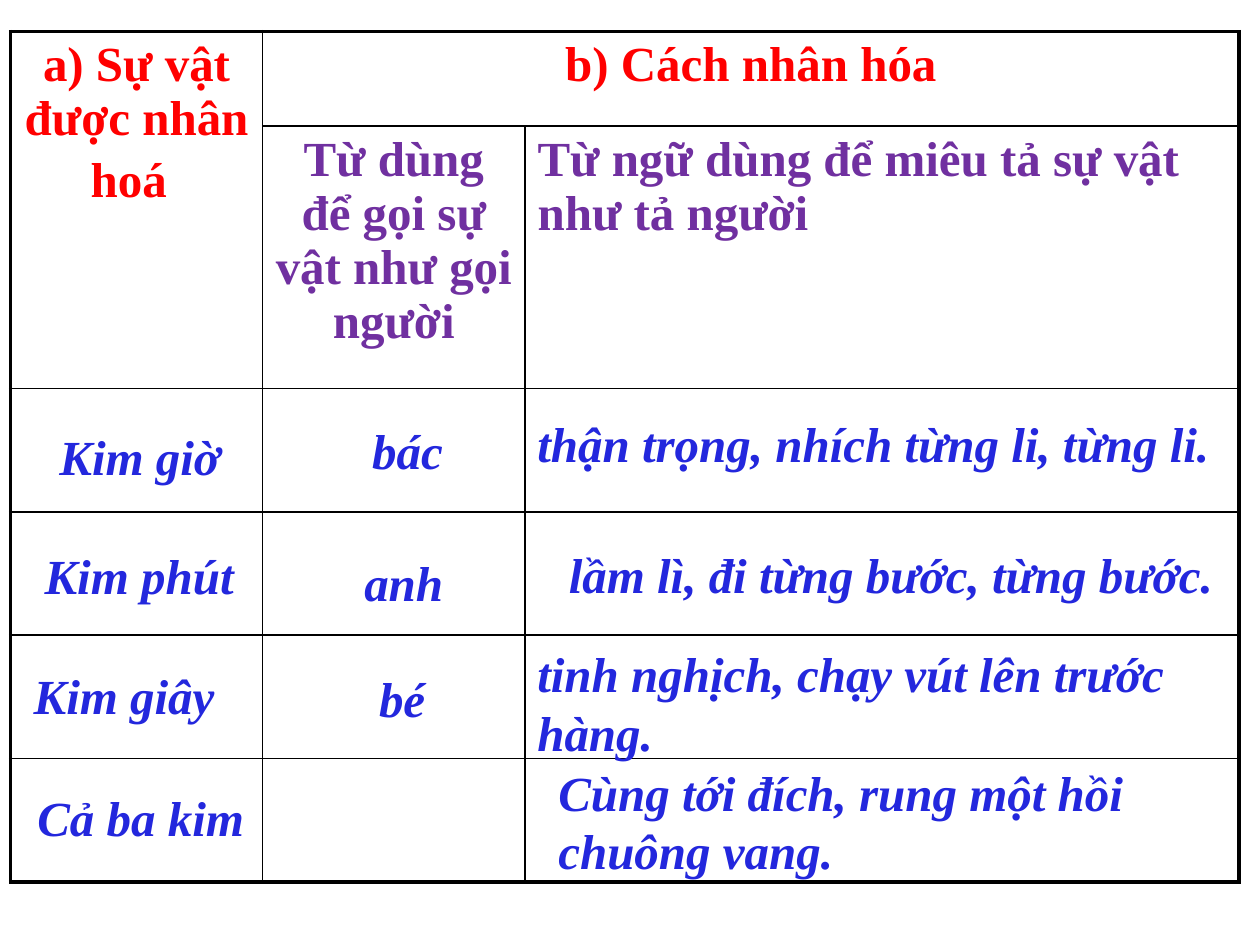
from dataclasses import dataclass
from typing import Any

from lxml.etree import SubElement
from pptx import Presentation
from pptx.dml.color import RGBColor
from pptx.enum.text import MSO_AUTO_SIZE, PP_ALIGN
from pptx.oxml.ns import qn
from pptx.util import Inches, Pt

GRID_COLUMNS = 120
GRID_ROWS = 90


def color(value):
    return RGBColor.from_string(value)


def write(para, text, *, font="Times New Roman", size=28, fill="000000",
          bold=True, italic=False, align=PP_ALIGN.LEFT):
    para.alignment = align
    span = para.add_run()
    span.text = text
    span.font.name = font
    span.font.size = Pt(size)
    span.font.bold = bold
    span.font.italic = italic
    span.font.color.rgb = color(fill)


@dataclass
class SlideBuilder:
    deck: Any
    page: Any
    answer: str = "2327DD"
    border: str = "000000"
    inner: float = 1
    outer: float = 2.25

    def across(self, columns):
        return round(self.deck.slide_width * columns / GRID_COLUMNS)

    def down(self, rows):
        return round(self.deck.slide_height * rows / GRID_ROWS)

    def frame(self, left, top, width, height):
        return self.across(left), self.down(top), self.across(width), self.down(height)

    def edge(self, cell, side, weight):
        line = SubElement(cell._tc.get_or_add_tcPr(), qn(f"a:ln{side}"),
                          w=str(Pt(weight)))
        fill = SubElement(line, qn("a:solidFill"))
        SubElement(fill, qn("a:srgbClr"), val=self.border)

    def table(self, left, top, widths, heights, merges):
        shape = self.page.shapes.add_table(
            len(heights), len(widths),
            *self.frame(left, top, sum(widths), sum(heights)))
        table = shape.table
        table.first_row = False
        table.horz_banding = False
        for column, width in zip(table.columns, widths):
            column.width = self.across(width)
        for row, height in zip(table.rows, heights):
            row.height = self.down(height)
        for first, last in merges:
            table.cell(*first).merge(table.cell(*last))
        for r in range(len(heights)):
            for c in range(len(widths)):
                cell = table.cell(r, c)
                outside = {"L": c == 0, "R": c + cell.span_width == len(widths),
                           "T": r == 0, "B": r + cell.span_height == len(heights)}
                for side, is_outer in outside.items():
                    self.edge(cell, side, self.outer if is_outer else self.inner)
                cell.fill.background()
        return table

    def answer_box(self, text, left, top, width, height=6.8, align=PP_ALIGN.CENTER):
        box = self.page.shapes.add_textbox(*self.frame(left, top, width, height))
        box.text_frame.word_wrap = True
        box.text_frame.auto_size = MSO_AUTO_SIZE.SHAPE_TO_FIT_TEXT
        write(box.text_frame.paragraphs[0], text, fill=self.answer,
              italic=True, align=align)


def main():
    deck = Presentation()
    deck.slide_width, deck.slide_height = Inches(10), Inches(7.5)
    builder = SlideBuilder(deck, deck.slides.add_slide(deck.slide_layouts[6]))

    table = builder.table(1, 3, [24, 25, 68], [9, 25] + [11.75] * 4,
                          [((0, 0), (1, 0)), ((0, 1), (0, 2))])
    red, purple = "FF0000", "7030A0"
    headings = [
        (0, 0, "a) Sự vật được nhân hoá", red, PP_ALIGN.CENTER),
        (0, 1, "b) Cách nhân hóa", red, PP_ALIGN.CENTER),
        (1, 1, "Từ dùng để gọi sự vật như gọi người", purple, PP_ALIGN.CENTER),
        (1, 2, "Từ ngữ dùng để miêu tả sự vật như tả người", purple, PP_ALIGN.LEFT),
    ]
    for row, column, text, fill, align in headings:
        para = table.cell(row, column).text_frame.paragraphs[0]
        write(para, text, fill=fill, align=align)
    write(table.cell(0, 0).text_frame.paragraphs[0], " ", font="Arial",
          size=32, bold=False, align=PP_ALIGN.CENTER)

    names_and_titles = [
        ("Kim giờ ", 2.9, 40, 22),
        ("Kim phút ", 2.75, 51.4, 21),
        ("Kim giây ", 1.9, 62.8, 21),
        ("Cả ba kim ", 2, 74.4, 22.8),
        ("bác", 27.8, 39.5, 22),
        ("anh", 26.8, 52, 23.3),
        ("bé", 26.8, 63.1, 23),
    ]
    for text, left, top, width in names_and_titles:
        builder.answer_box(text, left, top, width)

    descriptions = [
        ("thận trọng, nhích từng li, từng li.", 50, 38.8, 70, 6.8),
        ("lầm lì, đi từng bước, từng bước.", 53, 51.3, 67, 6.8),
        ("tinh nghịch, chạy vút lên trước hàng.", 50, 60.7, 67, 12.5),
        ("Cùng tới đích, rung một hồi chuông vang.", 52, 72, 65, 12.5),
    ]
    for text, left, top, width, height in descriptions:
        builder.answer_box(text, left, top, width, height, PP_ALIGN.LEFT)

    deck.save("out.pptx")


if __name__ == "__main__":
    main()
